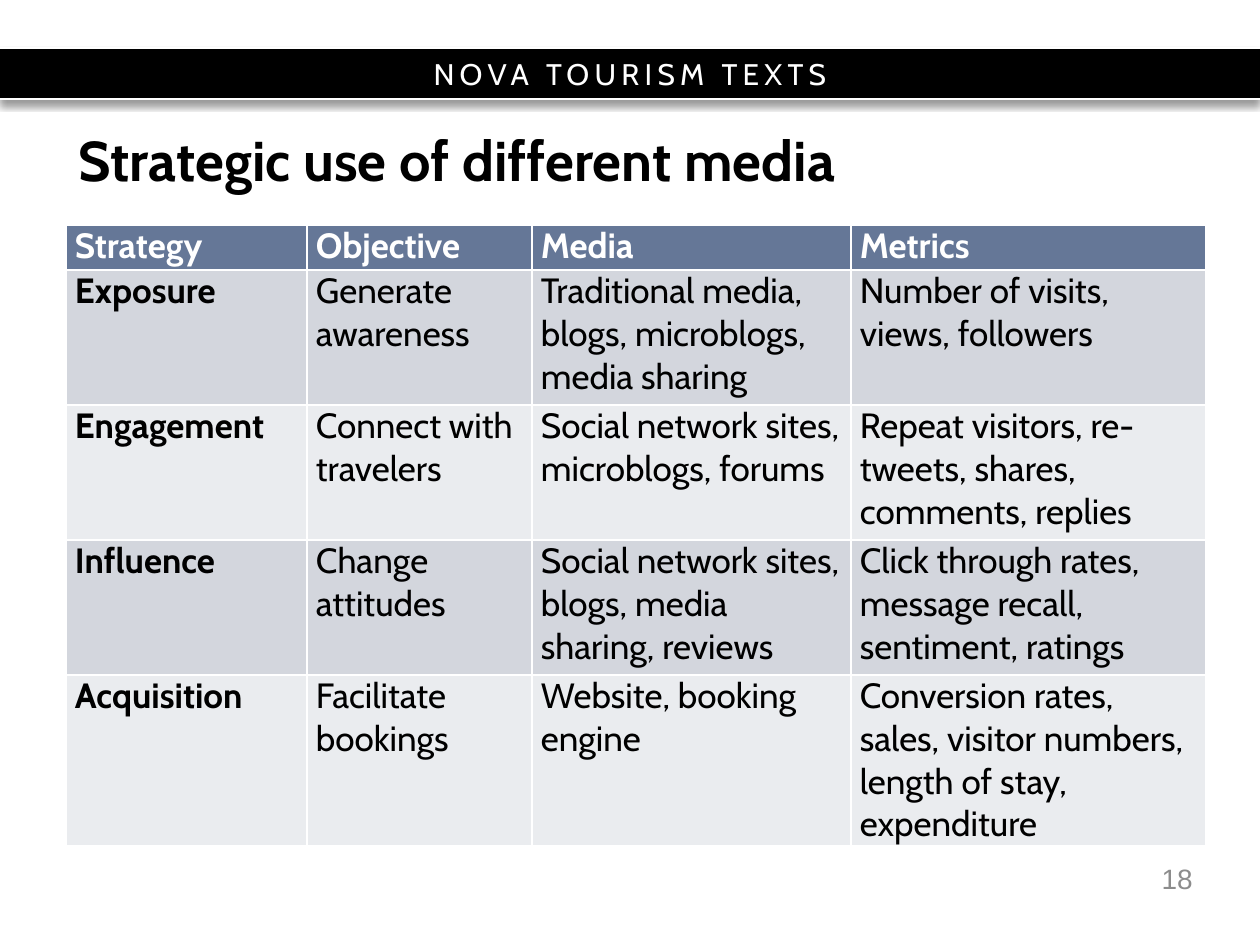
from dataclasses import dataclass

from lxml.etree import SubElement
from pptx import Presentation
from pptx.dml.color import RGBColor
from pptx.enum.shapes import MSO_CONNECTOR, MSO_SHAPE
from pptx.enum.text import MSO_ANCHOR, MSO_AUTO_SIZE, PP_ALIGN
from pptx.oxml.ns import qn
from pptx.util import Pt

SCALE = 914400 // 126  # EMU per px

BAND_TEXT = "NOVA TOURISM TEXTS"
TITLE = "Strategic use of different media"
PAGE_NUMBER = "18"
HEADER = ["Strategy", "Objective", "Media", "Metrics"]
STRATEGIES = [
    ["Exposure", "Generate awareness",
     "Traditional media, blogs, microblogs, media sharing",
     "Number of visits, views, followers"],
    ["Engagement", "Connect with travelers",
     "Social network sites, microblogs, forums",
     "Repeat visitors, re-tweets, shares, comments, replies"],
    ["Influence", "Change attitudes",
     "Social network sites, blogs, media sharing, reviews",
     "Click through rates, message recall, sentiment, ratings"],
    ["Acquisition", "Facilitate bookings",
     "Website, booking engine",
     "Conversion rates, sales, visitor numbers, length of stay, expenditure"],
]
COLUMN_WIDTHS = [241, 225, 319, 355]
HEADER_HEIGHT, ROW_HEIGHT = 45, 135
CELL_INSET = 9
PAGE_WIDTH, PAGE_HEIGHT = 1260, 945
LEFT, WIDTH = 66, sum(COLUMN_WIDTHS)
BAND_TOP, BAND_HEIGHT = 48, 51


@dataclass(frozen=True)
class Theme:
    face: str = "Cabin"
    number_face: str = "Arial"
    black: str = "000000"
    white: str = "FFFFFF"
    grey: str = "8C8C8C"
    header: str = "657797"
    bands: tuple = ("D3D6DD", "EAECEF")
    band_size: int = 17
    title_size: int = 32
    cell_size: int = 20
    number_size: int = 16


THEME = Theme()


def px(*lengths):
    return [length * SCALE for length in lengths]


def style(para, size, color, bold=False, face=THEME.face):
    font = para.font
    font.name, font.size, font.bold = face, Pt(size), bold
    font.color.rgb = RGBColor.from_string(color)


def paint(fill, color):
    fill.solid()
    fill.fore_color.rgb = RGBColor.from_string(color)


def add_band(page):
    band = page.shapes.add_shape(
        MSO_SHAPE.RECTANGLE, *px(0, BAND_TOP, PAGE_WIDTH, BAND_HEIGHT))
    paint(band.fill, THEME.black)
    band.line.fill.background()
    band.shadow.inherit = False
    effects = band._element.spPr.find(qn("a:effectLst"))
    shadow = SubElement(effects, qn("a:outerShdw"), blurRad=str(Pt(4)),
                        dist=str(Pt(3)), dir="5400000", rotWithShape="0")
    color = SubElement(shadow, qn("a:srgbClr"), val=THEME.black)
    SubElement(color, qn("a:alpha"), val="40000")

    band.text_frame.vertical_anchor = MSO_ANCHOR.MIDDLE
    para = band.text_frame.paragraphs[0]
    para.alignment = PP_ALIGN.CENTER
    span = para.add_run()
    span.text = BAND_TEXT
    span._r.get_or_add_rPr().set("spc", "300")
    style(para, THEME.band_size, THEME.white)

    for y in (BAND_TOP, BAND_TOP + BAND_HEIGHT):
        edge = page.shapes.add_connector(
            MSO_CONNECTOR.STRAIGHT, *px(0, y, PAGE_WIDTH, y))
        edge.line.color.rgb = RGBColor.from_string(THEME.white)
        edge.line.width = Pt(0.75)
        SubElement(edge._element.spPr, qn("a:effectLst"))


def add_title(page):
    title = page.shapes.title
    title.left, title.top, title.width, title.height = px(LEFT, 135, WIDTH, 60)
    frame = title.text_frame
    frame.text = TITLE
    frame.auto_size = MSO_AUTO_SIZE.NONE
    frame.vertical_anchor = MSO_ANCHOR.MIDDLE
    para = frame.paragraphs[0]
    para.alignment = PP_ALIGN.LEFT
    para.line_spacing = Pt(THEME.title_size)
    style(para, THEME.title_size, THEME.black, bold=True)


def add_strategy_table(page):
    rows = [HEADER] + STRATEGIES
    heights = [HEADER_HEIGHT] + [ROW_HEIGHT] * len(STRATEGIES)
    table = page.shapes.add_table(
        len(rows), len(HEADER), *px(LEFT, 225, WIDTH, sum(heights))).table
    for column, width in zip(table.columns, px(*COLUMN_WIDTHS)):
        column.width = width
    for row, height in zip(table.rows, px(*heights)):
        row.height = height

    for r, texts in enumerate(rows):
        is_header = r == 0
        for c, text in enumerate(texts):
            cell = table.cell(r, c)
            cell.text = text
            cell.margin_left, cell.margin_right = px(CELL_INSET, CELL_INSET)
            cell.margin_top = cell.margin_bottom = 0
            paint(cell.fill, THEME.header if is_header
                  else THEME.bands[(r - 1) % 2])
            para = cell.text_frame.paragraphs[0]
            style(para, THEME.cell_size,
                  THEME.white if is_header else THEME.black,
                  bold=is_header or c == 0)
            if not is_header and c == len(HEADER) - 1:
                para.space_after = Pt(2.9)


def add_page_number(page):
    box = page.shapes.add_textbox(*px(911, 853, 294, 50))
    frame = box.text_frame
    frame.word_wrap = True
    frame.vertical_anchor = MSO_ANCHOR.MIDDLE
    frame.text = PAGE_NUMBER
    para = frame.paragraphs[0]
    para.alignment = PP_ALIGN.RIGHT
    style(para, THEME.number_size, THEME.grey, face=THEME.number_face)


def main():
    deck = Presentation()
    deck.slide_width, deck.slide_height = px(PAGE_WIDTH, PAGE_HEIGHT)
    page = deck.slides.add_slide(deck.slide_layouts[5])
    add_band(page)
    add_strategy_table(page)
    add_title(page)
    add_page_number(page)
    deck.save("out.pptx")


if __name__ == "__main__":
    main()
